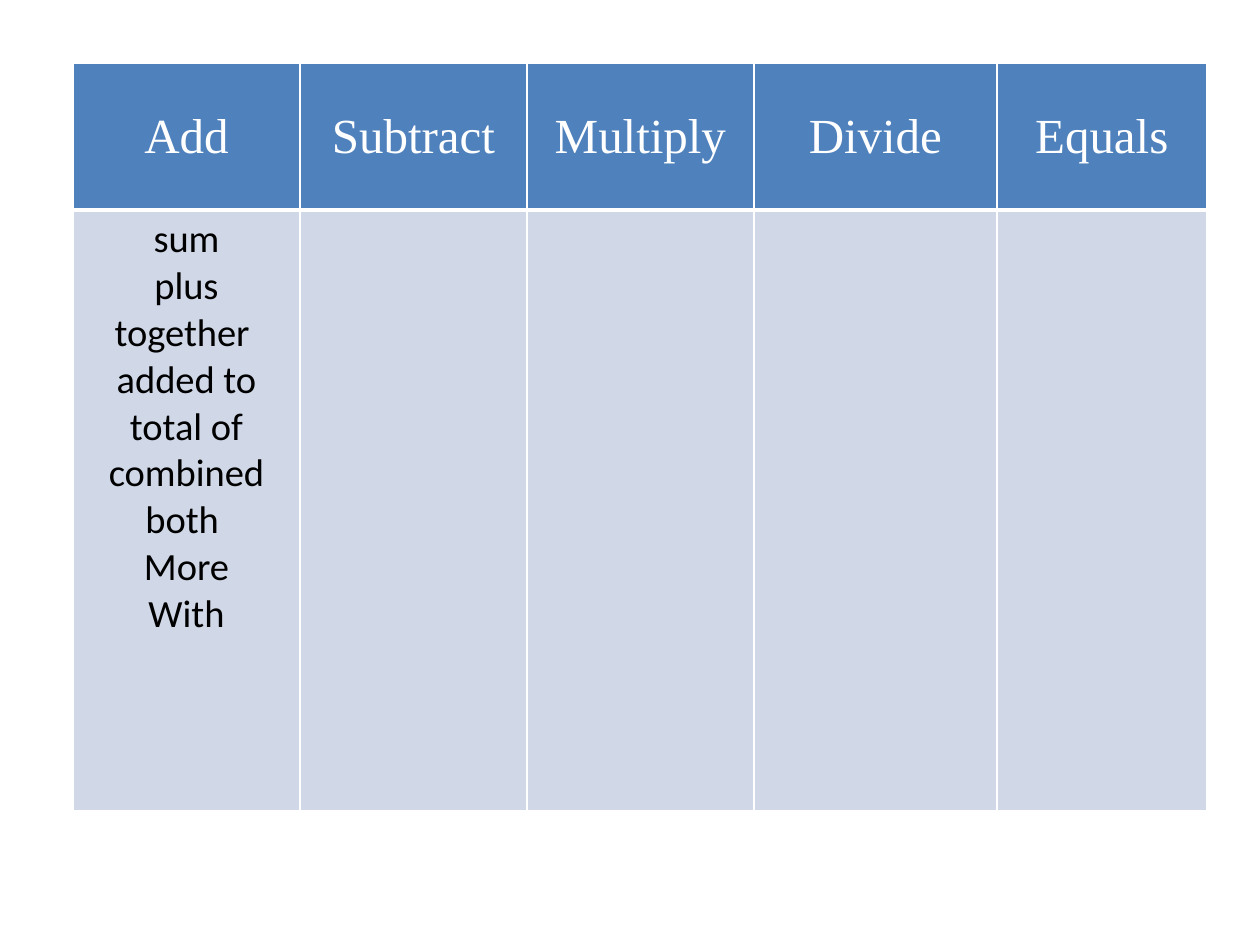
from lxml.etree import SubElement
from pptx import Presentation
from pptx.dml.color import RGBColor
from pptx.enum.text import MSO_ANCHOR as Anchor, PP_ALIGN as Align
from pptx.oxml.ns import qn
from pptx.util import Pt

PX = 914400 // 126
WHITE, BLACK, BLUE, PALE = "FFFFFF", "000000", "4F81BD", "D0D8E8"

OPERATIONS = {
    "Add": ["sum", "plus", "together ", "added to", "total of", "combined",
            "both ", "More", "With"],
    "Subtract": [],
    "Multiply": [],
    "Divide": [],
    "Equals": [],
}
COL_WIDTHS = [227, 227, 227, 243, 210]
ROW_HEIGHTS = [147, 601]


def px(n):
    return n * PX


def rgb(color):
    return RGBColor.from_string(color)


def set_borders(cell, bottom):
    """Draw white cell borders, 1 pt wide except for the bottom one."""
    tcPr = cell._tc.get_or_add_tcPr()
    for side, width in zip("LRTB", (1, 1, 1, bottom)):
        ln = SubElement(tcPr, qn(f"a:ln{side}"), w=str(Pt(width)))
        fill = SubElement(ln, qn("a:solidFill"))
        SubElement(fill, qn("a:srgbClr"), val=WHITE)


def fill_cell(cell, lines, font, size, color, back, anchor, bottom=1):
    set_borders(cell, bottom)
    cell.fill.solid()
    cell.fill.fore_color.rgb = rgb(back)
    cell.vertical_anchor = anchor
    tf = cell.text_frame
    tf.text = "\n".join(lines)
    for p in tf.paragraphs:
        p.alignment = Align.CENTER
        for r in p.runs:
            r.font.name = font
            r.font.size = Pt(size)
            r.font.bold = False
            r.font.color.rgb = rgb(color)


def add_word_table(s, x, y, col_widths, row_heights):
    """Add a table with an operation per column and its key words below."""
    table = s.shapes.add_table(
        len(row_heights), len(col_widths), px(x), px(y),
        px(sum(col_widths)), px(sum(row_heights))).table
    for col, width in zip(table.columns, col_widths):
        col.width = px(width)
    for row, height in zip(table.rows, row_heights):
        row.height = px(height)
    for i, (operation, words) in enumerate(OPERATIONS.items()):
        fill_cell(table.cell(0, i), [operation], "Times New Roman", 28,
                  WHITE, BLUE, Anchor.MIDDLE, bottom=3)
        fill_cell(table.cell(1, i), words, "Calibri", 22,
                  BLACK, PALE, Anchor.TOP)


def main():
    prs = Presentation()
    prs.slide_width, prs.slide_height = px(1260), px(945)
    s = prs.slides.add_slide(prs.slide_layouts[6])
    add_word_table(s, 73, 63, COL_WIDTHS, ROW_HEIGHTS)
    prs.save("out.pptx")


if __name__ == "__main__":
    main()
